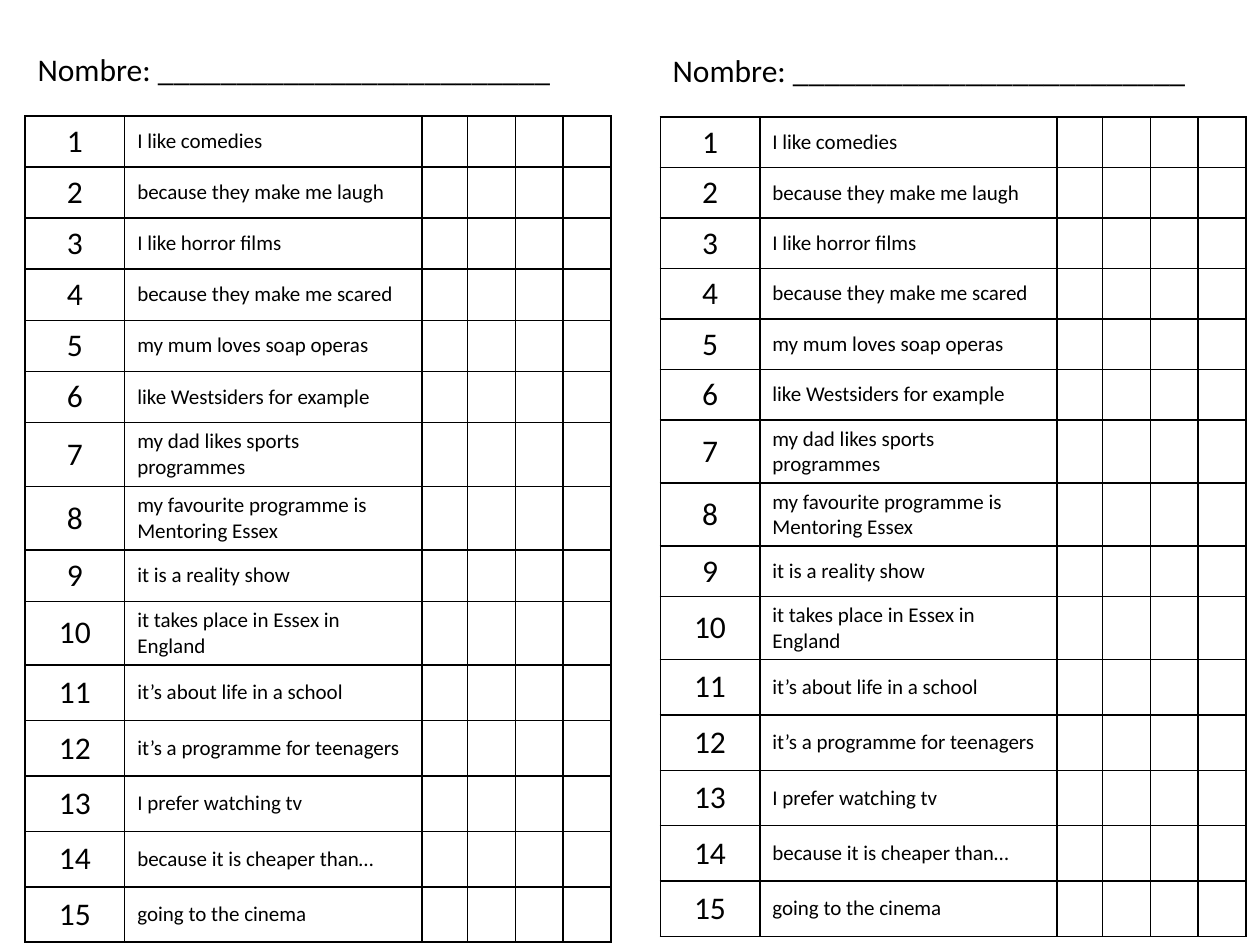
from lxml.etree import SubElement
from pptx import Presentation
from pptx.dml.color import RGBColor
from pptx.enum.text import MSO_ANCHOR, MSO_AUTO_SIZE, PP_ALIGN
from pptx.oxml.ns import qn
from pptx.util import Inches, Pt

BLACK = RGBColor(0, 0, 0)
WHITE = RGBColor(255, 255, 255)
SLIDE_WIDTH, SLIDE_HEIGHT = Inches(10), Inches(7.5)
COLUMN_SHARES = [0.079, 0.236, 0.036, 0.038, 0.038, 0.038]
ROW_HEIGHTS = [Inches(0.35)] * 9 + [Inches(0.44)] * 6
LARGE_FORMAT = {"name": "Calibri", "size": Pt(18), "bold": False}
PHRASE_FORMAT = {**LARGE_FORMAT, "size": Pt(12)}
PHRASES = [
    "I like comedies",
    "because they make me laugh",
    "I like horror films",
    "because they make me scared",
    "my mum loves soap operas",
    "like Westsiders for example",
    "my dad likes sports programmes",
    "my favourite programme is Mentoring Essex",
    "it is a reality show",
    "it takes place in Essex in England",
    "it’s about life in a school",
    "it’s a programme for teenagers",
    "I prefer watching tv",
    "because it is cheaper than…",
    "going to the cinema",
]


def write_text(paragraph, text, font_format, alignment=PP_ALIGN.LEFT):
    paragraph.alignment = alignment
    run = paragraph.add_run()
    run.text = text
    for attribute, value in font_format.items():
        setattr(run.font, attribute, value)
    run.font.color.rgb = BLACK


def add_borders(cell):
    properties = cell._tc.get_or_add_tcPr()
    for position, side in enumerate(("lnL", "lnR", "lnT", "lnB")):
        line = SubElement(properties, qn(f"a:{side}"), w=str(Pt(1)))
        fill = SubElement(line, qn("a:solidFill"))
        SubElement(fill, qn("a:srgbClr"), val=str(BLACK))
        properties.remove(line)
        properties.insert(position, line)


presentation = Presentation()
presentation.slide_width = SLIDE_WIDTH
presentation.slide_height = SLIDE_HEIGHT
slide = presentation.slides.add_slide(presentation.slide_layouts[6])
slide.background.fill.solid()
slide.background.fill.fore_color.rgb = WHITE

for sheet in range(2):
    left = int(SLIDE_WIDTH * (0.02 + 0.504 * sheet))
    offset = Inches(0.01) * sheet

    table_shape = slide.shapes.add_table(
        len(PHRASES), len(COLUMN_SHARES), left, Inches(0.92) + offset,
        int(SLIDE_WIDTH * sum(COLUMN_SHARES)), sum(ROW_HEIGHTS))
    table = table_shape.table
    for attribute in ("first_row", "horz_banding"):
        setattr(table, attribute, False)
    for column, share in zip(table.columns, COLUMN_SHARES):
        column.width = int(SLIDE_WIDTH * share)
    for row, height in zip(table.rows, ROW_HEIGHTS):
        row.height = height
    for cell in table.iter_cells():
        cell.fill.background()
        cell.vertical_anchor = MSO_ANCHOR.MIDDLE
        add_borders(cell)
    for index, phrase in enumerate(PHRASES):
        number_cell, phrase_cell = table.cell(index, 0), table.cell(index, 1)
        write_text(number_cell.text_frame.paragraphs[0], str(index + 1),
                   LARGE_FORMAT, PP_ALIGN.CENTER)
        write_text(phrase_cell.text_frame.paragraphs[0], phrase, PHRASE_FORMAT)

    name_box = slide.shapes.add_textbox(
        left, Inches(0.35) + offset, int(SLIDE_WIDTH * 0.441), Inches(0.4))
    name_box.text_frame.word_wrap = True
    name_box.text_frame.auto_size = MSO_AUTO_SIZE.SHAPE_TO_FIT_TEXT
    write_text(name_box.text_frame.paragraphs[0], "Nombre: " + "_" * 25, LARGE_FORMAT)

presentation.save("out.pptx")
